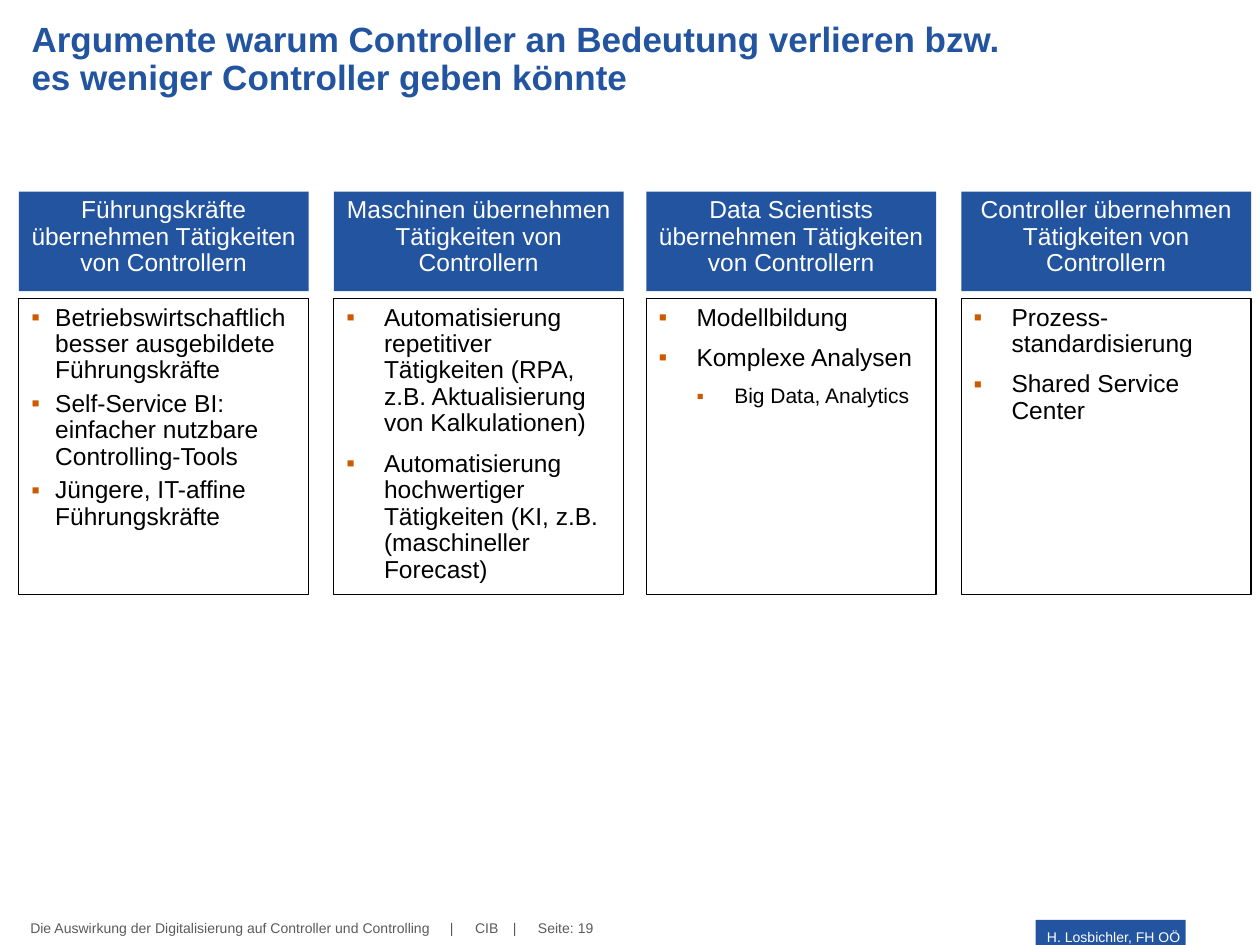
from dataclasses import dataclass

from lxml.etree import SubElement
from pptx import Presentation
from pptx.dml.color import RGBColor
from pptx.enum.shapes import MSO_SHAPE
from pptx.enum.text import MSO_ANCHOR, MSO_AUTO_SIZE, PP_ALIGN
from pptx.oxml.ns import qn
from pptx.slide import Slide
from pptx.util import Inches, Pt

BLUE = RGBColor(0x22, 0x54, 0xA0)
ORANGE = RGBColor(0xCD, 0x5A, 0x00)
GREY = RGBColor(0x59, 0x5B, 0x5B)
BLACK = RGBColor(0, 0, 0)
WHITE = RGBColor(0xFF, 0xFF, 0xFF)

COLUMN_WIDTH = 2.3
HEADER_TOP, HEADER_HEIGHT = 1.52, 0.79
LIST_TOP, LIST_HEIGHT = 2.37, 2.35
FOOTER_TOP = 7.3

# Each column: left, heading, bullet indent, space before, (level, text) items
COLUMNS = [
    (0.15, "Führungskräfte übernehmen Tätigkeiten von Controllern", 0.19, 4, [
        (0, "Betriebswirtschaftlich besser ausgebildete Führungskräfte"),
        (0, "Self-Service BI: einfacher nutzbare Controlling-Tools"),
        (0, "Jüngere, IT-affine Führungskräfte"),
    ]),
    (2.65, "Maschinen übernehmen Tätigkeiten von Controllern", 0.3, 8, [
        (0, "Automatisierung repetitiver Tätigkeiten (RPA, z.B. Aktualisierung von Kalkulationen)"),
        (0, "Automatisierung hochwertiger Tätigkeiten (KI, z.B.(maschineller Forecast)"),
    ]),
    (5.13, "Data Scientists übernehmen Tätigkeiten von Controllern", 0.3, 8, [
        (0, "Modellbildung"),
        (0, "Komplexe Analysen"),
        (1, "Big Data, Analytics"),
    ]),
    (7.63, "Controller übernehmen Tätigkeiten von Controllern", 0.3, 8, [
        (0, "Prozess-standardisierung"),
        (0, "Shared Service Center"),
    ]),
]

# Each footer part: left, width, text, tab stop of the separator
FOOTERS = [
    (0.24, 3.45, "Die Auswirkung der Digitalisierung auf Controller und Controlling\t|", 3.33),
    (3.77, 0.45, "CIB\t|", 0.3),
    (4.27, 0.63, "Seite: 19", None),
]


@dataclass
class SlideBuilder:
    page: Slide
    font: str = "Arial"
    line_spacing: float = 0.9

    def format_runs(self, para, size, color, bold=False):
        for span in para.runs:
            span.font.name = self.font
            span.font.size = Pt(size)
            span.font.bold = bold
            span.font.color.rgb = color

    def title(self, text, left, top, width, height):
        box = self.page.shapes.title
        box.left, box.top = Inches(left), Inches(top)
        box.width, box.height = Inches(width), Inches(height)
        frame = box.text_frame
        frame.text = text
        frame.auto_size = MSO_AUTO_SIZE.NONE
        frame.vertical_anchor = MSO_ANCHOR.BOTTOM
        para = frame.paragraphs[0]
        para.alignment = PP_ALIGN.LEFT
        para.line_spacing = self.line_spacing
        self.format_runs(para, 20, BLUE, bold=True)

    def rectangle(self, left, top, width, height, fill=None, line=None):
        box = self.page.shapes.add_shape(
            MSO_SHAPE.RECTANGLE, Inches(left), Inches(top), Inches(width), Inches(height))
        box.shadow.inherit = False
        if fill is None:
            box.fill.background()
        else:
            box.fill.solid()
            box.fill.fore_color.rgb = fill
        if line is None:
            box.line.fill.background()
        else:
            box.line.color.rgb = line
            box.line.width = Pt(0.75)
        box.text_frame.word_wrap = True
        box.text_frame.vertical_anchor = MSO_ANCHOR.TOP
        return box

    def header(self, text, left):
        box = self.rectangle(left, HEADER_TOP, COLUMN_WIDTH, HEADER_HEIGHT, fill=BLUE)
        box.text_frame.text = text
        para = box.text_frame.paragraphs[0]
        para.alignment = PP_ALIGN.CENTER
        para.line_spacing = self.line_spacing
        self.format_runs(para, 14, WHITE)

    def bullet(self, para, level, indent):
        properties = para._p.get_or_add_pPr()
        properties.set("marL", str(Inches(indent * (level + 1))))
        properties.set("indent", str(-Inches(indent)))
        color = SubElement(properties, qn("a:buClr"))
        SubElement(color, qn("a:srgbClr"), val=str(ORANGE))
        SubElement(properties, qn("a:buFont"), typeface=self.font)
        SubElement(properties, qn("a:buChar"), char="▪")

    def bullet_list(self, items, left, indent, space):
        box = self.rectangle(left, LIST_TOP, COLUMN_WIDTH, LIST_HEIGHT, line=BLACK)
        frame = box.text_frame
        for index, (level, text) in enumerate(items):
            para = frame.add_paragraph() if index else frame.paragraphs[0]
            para.text = text
            para.level = level
            para.alignment = PP_ALIGN.LEFT
            para.line_spacing = self.line_spacing
            para.space_before = Pt(space if index else 0)
            self.bullet(para, level, indent)
            self.format_runs(para, 12 if level else 14, BLACK)

    def footer(self, left, width, text, tab_stop):
        box = self.page.shapes.add_textbox(
            Inches(left), Inches(FOOTER_TOP), Inches(width), Inches(0.13))
        frame = box.text_frame
        frame.word_wrap = True
        frame.margin_left = frame.margin_right = 0
        frame.margin_top = frame.margin_bottom = 0
        frame.text = text
        para = frame.paragraphs[0]
        if tab_stop is not None:
            tabs = SubElement(para._p.get_or_add_pPr(), qn("a:tabLst"))
            SubElement(tabs, qn("a:tab"), pos=str(Inches(tab_stop)), algn="l")
        self.format_runs(para, 8, GREY)

    def author_tag(self, text):
        box = self.rectangle(8.22, FOOTER_TOP, 1.19, 0.22, fill=BLUE)
        frame = box.text_frame
        frame.margin_left = frame.margin_right = Inches(0.04)
        frame.margin_top = frame.margin_bottom = Inches(0.02)
        frame.vertical_anchor = MSO_ANCHOR.BOTTOM
        frame.text = text
        para = frame.paragraphs[0]
        para.alignment = PP_ALIGN.RIGHT
        self.format_runs(para, 8, WHITE)


def main():
    deck = Presentation()
    deck.slide_width, deck.slide_height = Inches(10), Inches(7.5)
    builder = SlideBuilder(deck.slides.add_slide(deck.slide_layouts[5]))

    # Footer line
    for left, width, text, tab_stop in FOOTERS:
        builder.footer(left, width, text, tab_stop)
    builder.author_tag("H. Losbichler, FH OÖ")

    # Title
    builder.title(
        "Argumente warum Controller an Bedeutung verlieren bzw. "
        "es weniger Controller geben könnte", 0.15, 0.08, 7.94, 0.75)

    # Four columns of arguments
    for left, heading, indent, space, items in COLUMNS:
        builder.header(heading, left)
        builder.bullet_list(items, left, indent, space)

    deck.save("out.pptx")


if __name__ == "__main__":
    main()
